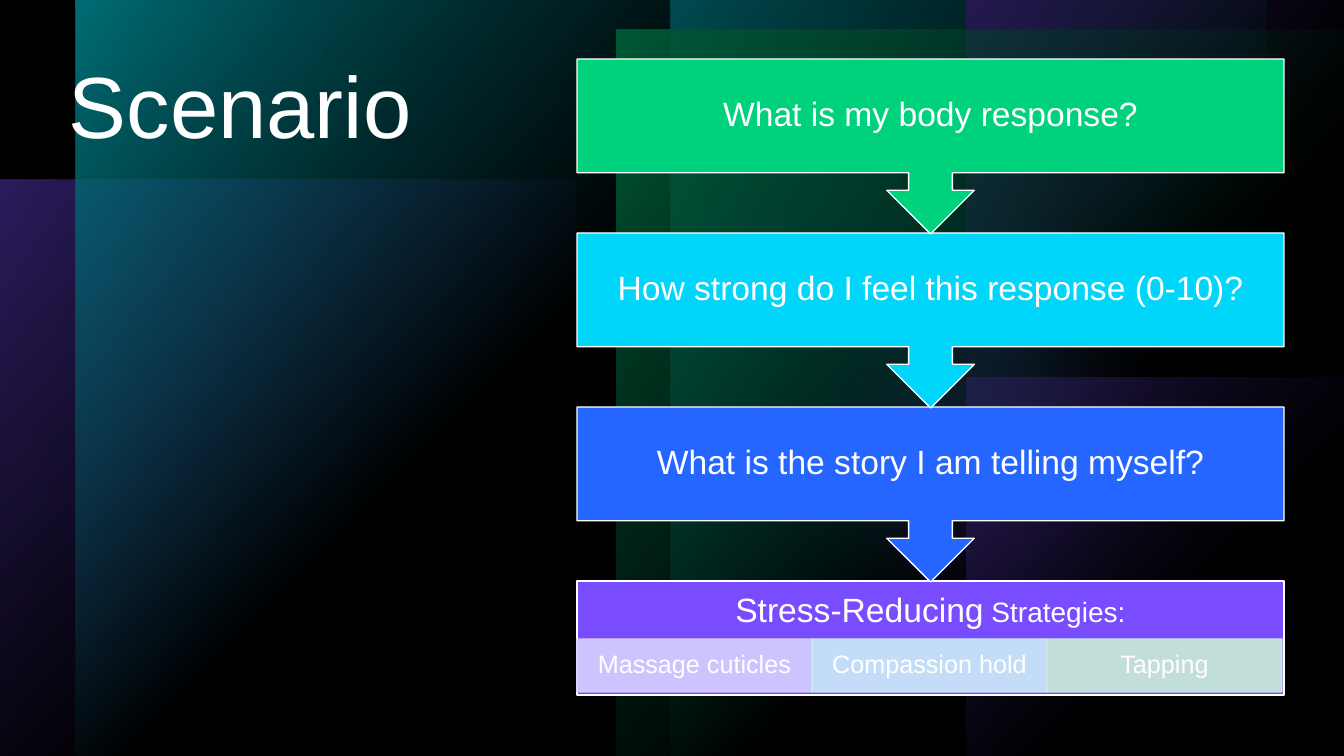
import pptx
import pptx.util
import pptx.dml.color
import pptx.enum.shapes
import pptx.enum.text
import pptx.oxml
import pptx.oxml.ns

FONT = "Arial"
WHITE, BLACK = "FFFFFF", "000000"
TEAL, GREEN, PURPLE = "00BAC8", "00D17D", "794DFF"

# Content
TITLE = "Scenario"
STEPS = [
    ("What is my body response?", GREEN),
    ("How strong do I feel this response (0-10)?", "00D5FA"),
    ("What is the story I am telling myself?", "2466FF"),
]
HEADING = [("Stress-Reducing", 24), (" Strategies:", 20)]
TACTICS = [
    ("Massage cuticles", "D7D0FF"),
    ("Compassion hold", "CCEDF8"),
    ("Tapping", "CBEED7"),
]

# Backdrop: left, top, width, height, colour, opacity
SIDE = (0, 180, 576, 576, PURPLE, 60)
GLOWS = [
    (704, 0, 476, 476, GREEN, 96),
    (674, 136, 607, 607, PURPLE, 60),
]
PANELS = [
    (671, 0, 596, 756, TEAL, 100),
    (76, 0, 596, 756, TEAL, 100),
    (966, 378, 378, 378, PURPLE, 100),
    (966, 0, 378, 378, PURPLE, 100),
    (617, 30, 727, 727, GREEN, 100),
]
BLUR = 140

# Layout in px
WIDE, HIGH = 1344, 756
LEFT, TOP, SPAN = 577, 59, 707
PITCH, CALL, BODY = 174, 175, 114
HEAD, CELL, ROW = 61, 235, 53
UNIT = 12192000 / WIDE

KIND = pptx.enum.shapes.MSO_SHAPE
MIDDLE = pptx.enum.text.MSO_ANCHOR.MIDDLE
CENTER = pptx.enum.text.PP_ALIGN.CENTER
NS = pptx.oxml.ns.nsdecls("a")


def px(num):
    return pptx.util.Emu(round(num * UNIT))


def rgb(code):
    return pptx.dml.color.RGBColor.from_string(code)


def fade(fill, alpha):
    tint = fill._xPr.find(".//" + pptx.oxml.ns.qn("a:srgbClr"))
    tint.append(pptx.oxml.parse_xml(f'<a:alpha {NS} val="{alpha * 1000}"/>'))


def add(kind, box, color=None, line=None, alpha=100):
    shape = slide.shapes.add_shape(kind, *map(px, box))
    shape.shadow.inherit = False
    if color:
        shape.fill.solid()
        shape.fill.fore_color.rgb = rgb(color)
    else:
        shape.fill.background()
    if line:
        shape.line.color.rgb = rgb(line)
        shape.line.width = pptx.util.Pt(1)
    else:
        shape.line.fill.background()
    if alpha < 100:
        fade(shape.fill, alpha)
        if line:
            fade(shape.line.fill, alpha)
    return shape


def blend(box, stops, way):
    """Add a rectangle with a gradient of (position, colour, opacity) stops."""
    shape = add(KIND.RECTANGLE, box)
    marks = "".join(
        f'<a:gs pos="{pos * 1000}"><a:srgbClr val="{color}">'
        f'<a:alpha val="{alpha * 1000}"/></a:srgbClr></a:gs>'
        for pos, color, alpha in stops)
    grad = pptx.oxml.parse_xml(
        f"<a:gradFill {NS}><a:gsLst>{marks}</a:gsLst>{way}</a:gradFill>")
    props = shape.element.spPr
    props.replace(props.find(pptx.oxml.ns.qn("a:noFill")), grad)


def panel(left, top, width, height, color, alpha):
    corner = ('<a:path path="circle">'
              '<a:fillToRect r="100000" b="100000"/></a:path>')
    blend((left, top, width, height),
          [(0, color, alpha), (60, color, 0)], corner)


def write(shape, runs, pad=None):
    frame = shape.text_frame
    frame.word_wrap = True
    para = frame.paragraphs[0]
    para.line_spacing = 0.9
    if pad:
        frame.vertical_anchor = MIDDLE
        para.alignment = CENTER
        frame.margin_left = frame.margin_right = px(pad[0])
        frame.margin_top = frame.margin_bottom = px(pad[1])
    for text, size in runs:
        run = para.add_run()
        run.text = text
        run.font.name = FONT
        run.font.size = pptx.util.Pt(size)
        run.font.color.rgb = rgb(WHITE)


def label(box, runs, pad=None):
    write(slide.shapes.add_textbox(*map(px, box)), runs, pad)


deck = pptx.Presentation()
deck.slide_width, deck.slide_height = px(WIDE), px(HIGH)
slide = deck.slides.add_slide(deck.slide_layouts[6])
slide.background.fill.solid()
slide.background.fill.fore_color.rgb = rgb(BLACK)

# Backdrop
panel(*SIDE)
for *box, color, alpha in GLOWS:
    glow = add(KIND.OVAL, box, color, alpha=alpha)
    effects = glow.element.spPr.find(pptx.oxml.ns.qn("a:effectLst"))
    effects.append(pptx.oxml.parse_xml(f'<a:softEdge {NS} rad="{px(BLUR)}"/>'))
for spot in PANELS:
    panel(*spot)
blend((0, 0, WIDE, HIGH), [(0, BLACK, 40), (100, BLACK, 80)],
      '<a:lin ang="0" scaled="0"/>')

# Title
label((59, 59, 496, 635), [(TITLE, 62)])

# Strategies
base = TOP + len(STEPS) * PITCH
add(KIND.RECTANGLE, (LEFT, base, SPAN, BODY), PURPLE, WHITE)
label((LEFT, base, SPAN, HEAD), HEADING, (19, 19))
for col, (text, color) in enumerate(TACTICS):
    cell = add(KIND.RECTANGLE, (LEFT + col * CELL, base + 58, CELL, ROW),
               color, color, 90)
    write(cell, [(text, 18)], (14, 3))

# Steps, last one at the back
for row, (text, color) in reversed(list(enumerate(STEPS))):
    top = TOP + row * PITCH
    step = add(KIND.UP_ARROW_CALLOUT, (LEFT, top, SPAN, CALL), color, WHITE)
    step.rotation = 180
    label((LEFT, top, SPAN, BODY), [(text, 24)], (19, 19))

deck.save("out.pptx")
